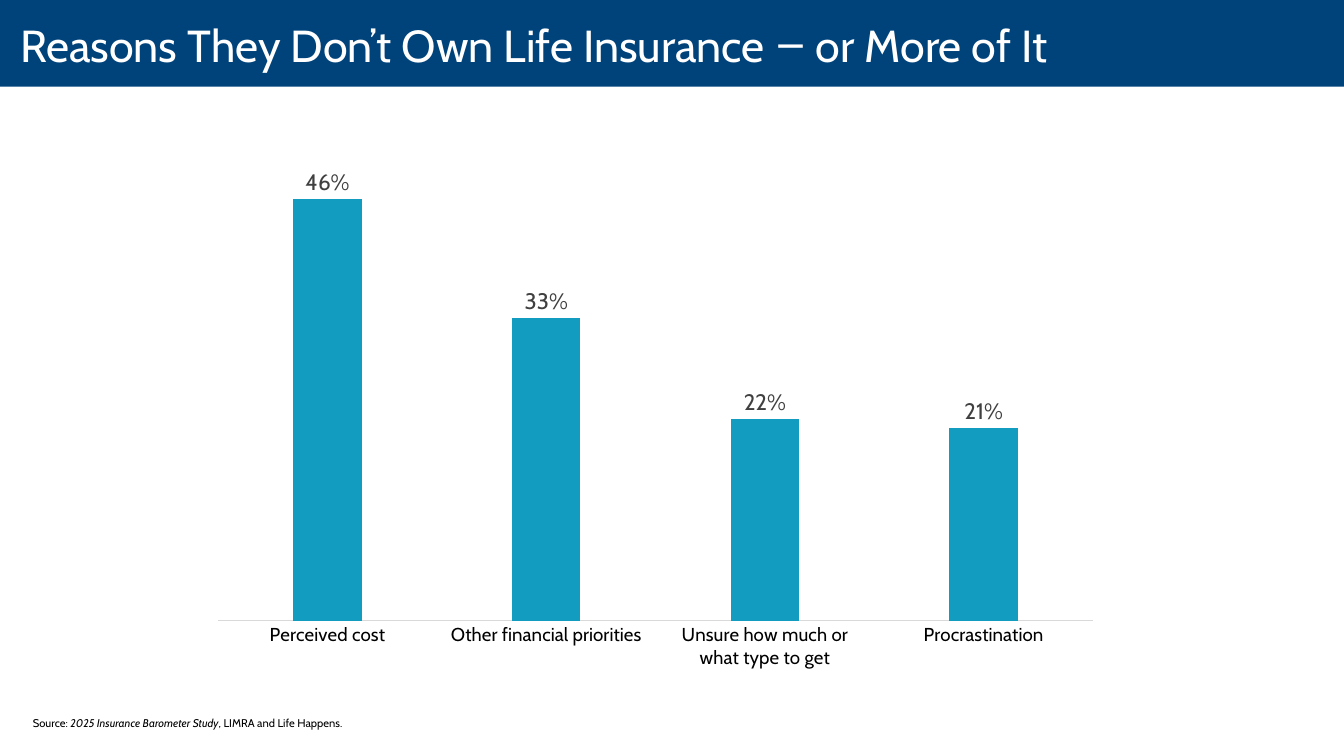
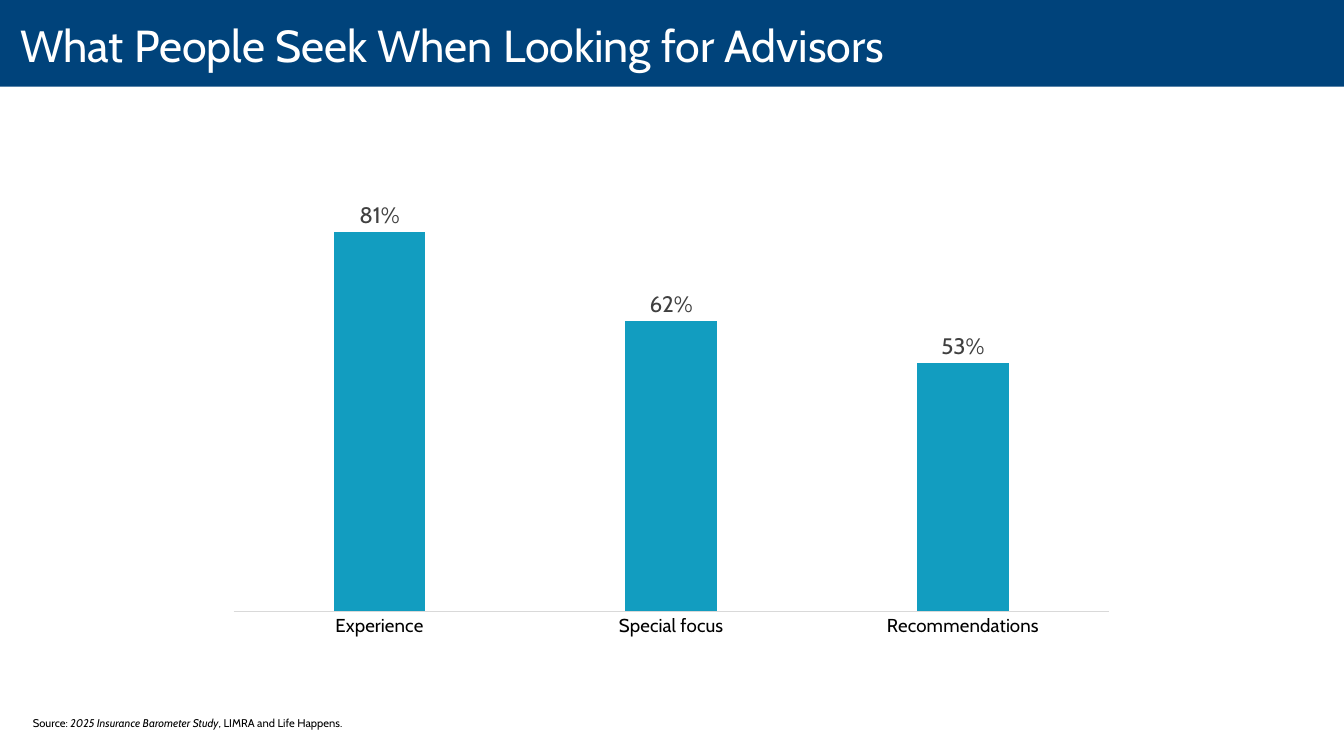
"""Build two slides of insurance survey charts."""
from pptx import Presentation
from pptx import oxml, util as u
from pptx.chart import data as cd
from pptx.dml.color import RGBColor
from pptx.enum import chart as ch, shapes, text
from pptx.oxml import ns

NAVY = RGBColor(0x00, 0x43, 0x7B)
TEAL = RGBColor(0x12, 0x9D, 0xC0)
WHITE = RGBColor(0xFF, 0xFF, 0xFF)
BLACK = RGBColor(0x00, 0x00, 0x00)
GREY = RGBColor(0x40, 0x40, 0x40)
PALE = RGBColor(0xD9, 0xD9, 0xD9)
FACE = "Cabin"
DASH = "Roboto Condensed"
COLS, ROWS = 20, 11.25
TITLE_ONLY = 5

SOURCE = [
    ("Source: ", {}),
    ("2025 Insurance Barometer Study", {"italic": True}),
    (", LIMRA and Life Happens.", {}),
]
PAGES = [
    {
        "title": [
            ("Reasons They Don’t Own Life Insurance ", {}),
            ("—", {"name": DASH}),
            (" or More of It", {}),
        ],
        "values": {
            "Perceived cost": 0.46,
            "Other financial priorities": 0.33,
            "Unsure how much or what type to get": 0.22,
            "Procrastination": 0.21,
        },
        "spot": (2.94, 1.43),
        "plot": {"x": 0.023, "y": 0.111, "w": 0.977, "h": 0.767},
        "top": 0.5,
    },
    {
        "title": [("What People Seek When Looking for Advisors", {})],
        "values": {
            "Experience": 0.81,
            "Special focus": 0.62,
            "Recommendations": 0.53,
        },
        "spot": (3.33, 1.39),
        "plot": {"x": 0.011, "y": 0.161, "w": 0.977, "h": 0.706},
        "top": 0.9,
    },
]


def style(font, size, color, name=FACE, italic=False):
    """Set the look of a font."""
    font.size, font.name, font.italic = u.Pt(size), name, italic
    font.color.rgb = color


def write(frame, parts, **look):
    """Write one left-aligned paragraph from (words, format) parts."""
    para = frame.paragraphs[0]
    para.alignment = text.PP_ALIGN.LEFT
    for words, extra in parts:
        run = para.add_run()
        run.text = words
        style(run.font, **{**look, **extra})


class Deck:
    """Hold the shared style and the current slide."""

    def __init__(self):
        """Start an empty deck."""
        self.prs = Presentation()
        self.prs.slide_width = u.Inches(20)
        self.prs.slide_height = u.Inches(11.25)
        self.layout = self.prs.slide_layouts[TITLE_ONLY]
        self.slide = None

    def box(self, col, row, wide, high):
        """Turn grid columns and rows into lengths."""
        cell_w = self.prs.slide_width / COLS
        cell_h = self.prs.slide_height / ROWS
        return [u.Emu(round(n * cell))
                for n, cell in zip((col, row, wide, high), (cell_w, cell_h) * 2)]

    def page(self):
        """Add a slide, giving the layout its band the first time."""
        first = self.slide is None
        self.slide = self.prs.slides.add_slide(self.layout)
        if first:
            self.band()

    def band(self):
        """Place the title band at the back of the layout."""
        bar = self.slide.shapes.add_shape(
            shapes.MSO_SHAPE.RECTANGLE, *self.box(0, 0, COLS, 1.29))
        bar.shadow.inherit = False
        bar.fill.solid()
        bar.fill.fore_color.rgb = NAVY
        bar.line.fill.background()
        self.layout.shapes.element.insert(2, bar.element)

    def title(self, parts):
        """Place and fill the title."""
        head = self.slide.shapes.title
        head.left, head.top, head.width, head.height = self.box(0, -0.07, COLS, 1.46)
        frame = head.text_frame
        frame.auto_size = text.MSO_AUTO_SIZE.NONE
        frame.word_wrap = False
        frame.vertical_anchor = text.MSO_ANCHOR.MIDDLE
        frame.margin_left, frame.margin_right = u.Inches(0.3), u.Inches(0.2)
        frame.margin_top = frame.margin_bottom = 0
        write(frame, parts, size=48, color=WHITE)

    def bars(self, values, spot, plot, top):
        """Draw a column chart of shares."""
        data = cd.CategoryChartData(number_format="0%")
        data.categories = list(values)
        data.add_series("Series 1", list(values.values()))
        chart = self.slide.shapes.add_chart(
            ch.XL_CHART_TYPE.COLUMN_CLUSTERED, *self.box(*spot, 13.33, 8.89), data).chart
        style(chart.font, 10, BLACK)
        chart.has_title = chart.has_legend = False

        cats = chart.category_axis
        cats.major_tick_mark = cats.minor_tick_mark = ch.XL_TICK_MARK.NONE
        cats.format.line.color.rgb = PALE
        cats.format.line.width = u.Pt(0.75)
        style(cats.tick_labels.font, 20, BLACK)
        axis = chart.value_axis
        axis.visible = axis.has_major_gridlines = False
        axis.minimum_scale, axis.maximum_scale = 0, top

        group = chart.plots[0]
        group.gap_width, group.overlap = 219, -27
        group.vary_by_categories = False
        row = group.series[0]
        row.format.fill.solid()
        row.format.fill.fore_color.rgb = TEAL
        tags = row.data_labels
        tags.show_value = True
        tags.position = ch.XL_LABEL_POSITION.OUTSIDE_END
        tags.number_format, tags.number_format_is_linked = "0%", False
        style(tags.font, 24, GREY)
        self.inset(chart, plot)

    def inset(self, chart, plot):
        """Fix the inner plot area as shares of the chart."""
        area = chart.element.find(".//" + ns.qn("c:plotArea"))
        for old in area.findall(ns.qn("c:layout")):
            area.remove(old)
        modes = "".join(f'<c:{key}Mode val="edge"/>' for key in "xy")
        sizes = "".join(f'<c:{key} val="{val}"/>' for key, val in plot.items())
        area.insert(0, oxml.parse_xml(
            f'<c:layout {ns.nsdecls("c")}><c:manualLayout>'
            f'<c:layoutTarget val="inner"/>{modes}{sizes}'
            '</c:manualLayout></c:layout>'))

    def source(self):
        """Add the source line."""
        note = self.slide.shapes.add_textbox(*self.box(0.39, 10.61, 13.67, 0.3))
        frame = note.text_frame
        frame.word_wrap = True
        frame.auto_size = text.MSO_AUTO_SIZE.SHAPE_TO_FIT_TEXT
        write(frame, SOURCE, size=12, color=BLACK)


def main():
    """Build and save the deck."""
    deck = Deck()
    for page in PAGES:
        deck.page()
        deck.title(page["title"])
        deck.bars(page["values"], page["spot"], page["plot"], page["top"])
        deck.source()
    deck.prs.save("out.pptx")


if __name__ == "__main__":
    main()
